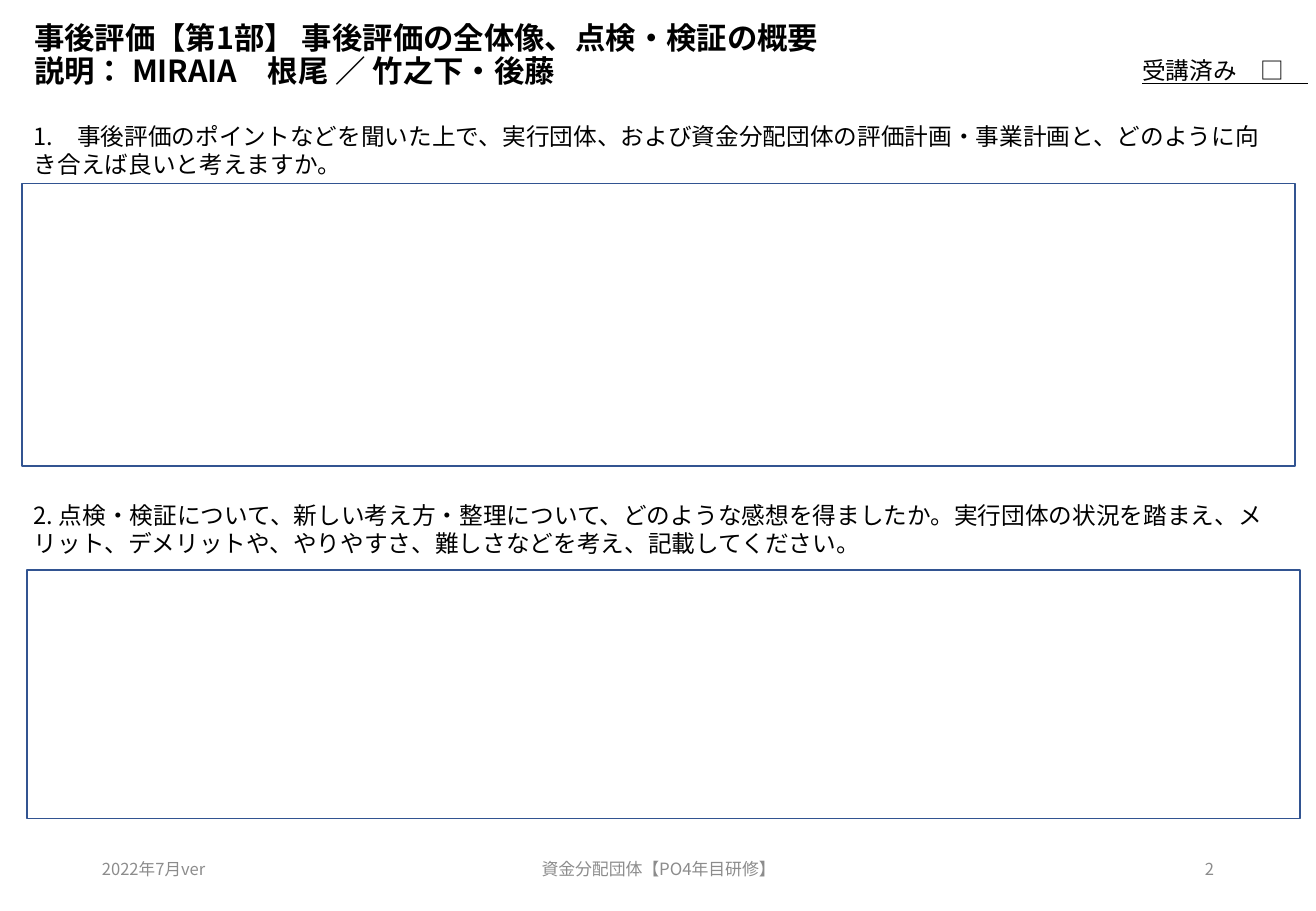
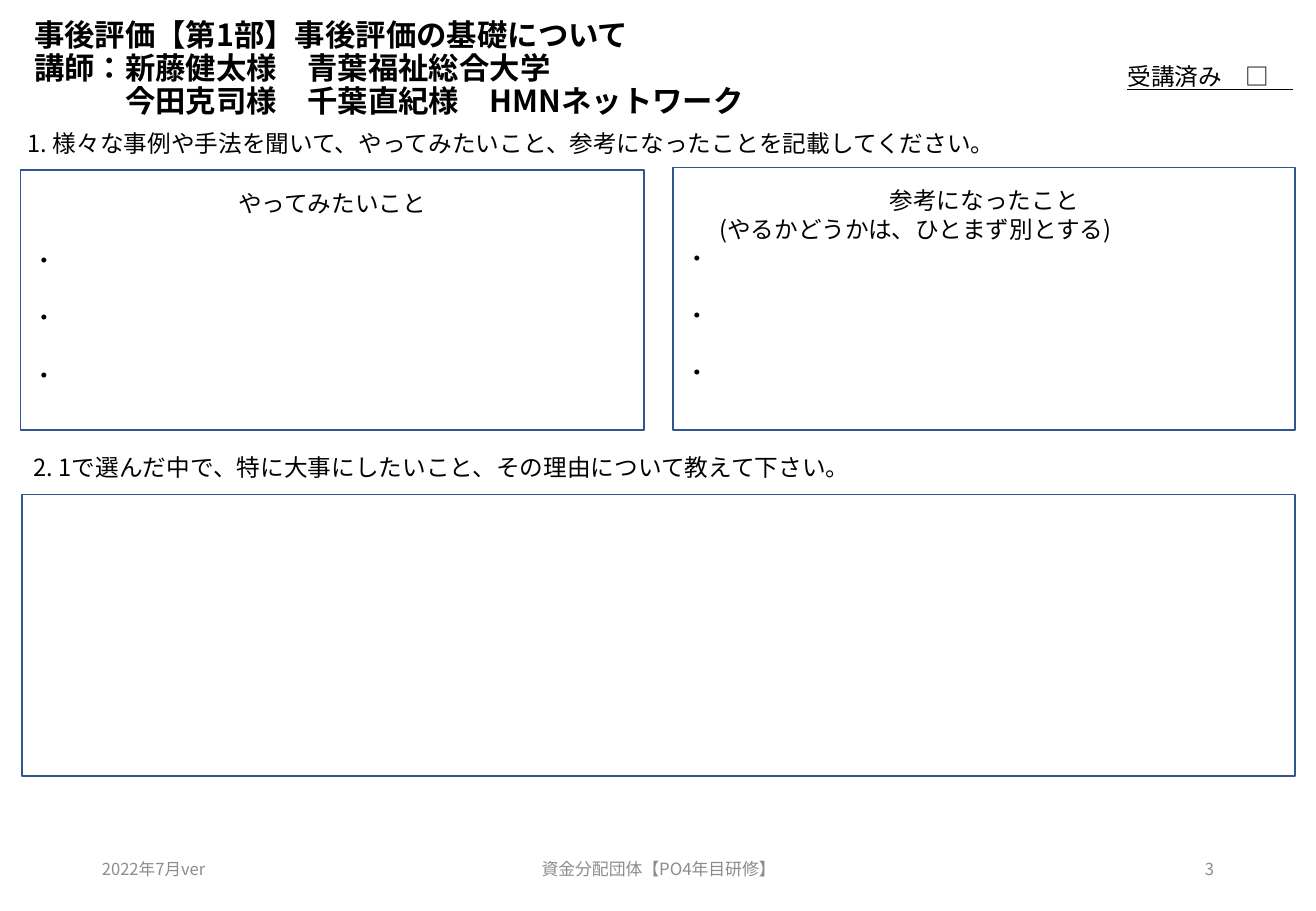
from pptx import Presentation
from pptx.dml.color import RGBColor
from pptx.enum import lang, shapes, text
from pptx.util import Inches, Pt

FONT = "Noto Sans CJK JP"
BLACK, GRAY, WHITE, BLUE = "000000", "8C8C8C", "FFFFFF", "325491"
LEFT, CENTER, RIGHT = text.PP_ALIGN.LEFT, text.PP_ALIGN.CENTER, text.PP_ALIGN.RIGHT
TOP, MIDDLE = text.MSO_ANCHOR.TOP, text.MSO_ANCHOR.MIDDLE


def rgb(color):
    return RGBColor.from_string(color)


def write(sp, lines, size=14, leading=17, color=BLACK, anchor=TOP, bold=False, underline=False):
    tf = sp.text_frame
    tf.word_wrap = True
    tf.auto_size = text.MSO_AUTO_SIZE.NONE
    tf.vertical_anchor = anchor
    for i, (line, align, indent, before) in enumerate(lines):
        p = tf.add_paragraph() if i else tf.paragraphs[0]
        p.text = line
        p.alignment = align
        p.line_spacing = Pt(leading)
        p.space_before = Pt(before)
        pPr = p._p.get_or_add_pPr()
        pPr.set("marL", str(Inches(indent)))
        pPr.set("indent", "0")
        for r in p.runs:
            r.font.name = FONT
            r.font.size = Pt(size)
            r.font.bold = bold
            r.font.underline = underline
            r.font.color.rgb = rgb(color)
            r.font.language_id = lang.MSO_LANGUAGE_ID.JAPANESE
            latin = r._r.rPr.find("{*}latin")
            ea = latin.makeelement(latin.tag.replace("latin", "ea"), {"typeface": FONT})
            latin.addnext(ea)


bullets = [("・", LEFT, 0, 17)] * 2

slides = [
    {
        "number": "2",
        "title": [
            ("事後評価【第1部】 事後評価の全体像、点検・検証の概要", LEFT, 0, 0),
            ("説明： MIRAIA　根尾 ／ 竹之下・後藤", LEFT, 0, 0),
        ],
        "title_at": (0.18, -0.04, 9.92, 0.99),
        "done_at": (9.3, 0.41, 2.01, 0.34),
        "questions": [
            ("1.　事後評価のポイントなどを聞いた上で、実行団体、および資金分配団体の評価計画・事業計画と、"
             "どのように向き合えば良いと考えますか。", (0.18, 0.95, 10.48, 0.57)),
            ("2. 点検・検証について、新しい考え方・整理について、どのような感想を得ましたか。"
             "実行団体の状況を踏まえ、メリット、デメリットや、やりやすさ、難しさなどを考え、記載してください。",
             (0.18, 4.07, 10.39, 0.57)),
        ],
        "answers": [
            ([], (0.18, 1.51, 10.48, 2.33)),
            ([], (0.22, 4.69, 10.48, 2.05)),
        ],
    },
    {
        "number": "3",
        "title": [
            ("事後評価【第1部】事後評価の基礎について", LEFT, 0, 0),
            ("講師：新藤健太様　青葉福祉総合大学", LEFT, 0, 0),
            ("今田克司様　千葉直紀様　HMNネットワーク", LEFT, 0.75, 0),
        ],
        "title_at": (0.18, 0.14, 9.34, 0.86),
        "done_at": (9.18, 0.46, 2.01, 0.34),
        "questions": [
            ("1. 様々な事例や手法を聞いて、やってみたいこと、参考になったことを記載してください。",
             (0.13, 1.01, 10.39, 0.34)),
            ("2. 1で選んだ中で、特に大事にしたいこと、その理由について教えて下さい。",
             (0.18, 3.68, 10.48, 0.34)),
        ],
        "answers": [
            ([("やってみたいこと", CENTER, 0, 0), ("・", LEFT, 0, 17)] + bullets,
             (0.17, 1.4, 5.13, 2.14)),
            ([("参考になったこと", CENTER, 0, 0),
              ("(やるかどうかは、ひとまず別とする)", LEFT, 0.28, 0),
              ("・", LEFT, 0, 0)] + bullets,
             (5.54, 1.38, 5.12, 2.16)),
            ([], (0.18, 4.07, 10.48, 2.32)),
        ],
    },
]

prs = Presentation()
prs.slide_width = Inches(10.83)
prs.slide_height = Inches(7.5)

for content in slides:
    s = prs.slides.add_slide(prs.slide_layouts[5])

    title = s.shapes.title
    title.left, title.top, title.width, title.height = map(Inches, content["title_at"])
    write(title, content["title"], size=18, leading=19.6, anchor=MIDDLE, bold=True)

    for lines, at in content["answers"]:
        sp = s.shapes.add_shape(shapes.MSO_SHAPE.RECTANGLE, *map(Inches, at))
        sp.shadow.inherit = False
        sp.fill.solid()
        sp.fill.fore_color.rgb = rgb(WHITE)
        sp.line.color.rgb = rgb(BLUE)
        sp.line.width = Pt(1)
        sp.text_frame.margin_top = Inches(0.15)
        write(sp, lines)

    for question, at in content["questions"]:
        sp = s.shapes.add_textbox(*map(Inches, at))
        write(sp, [(question, LEFT, 0, 0)])

    sp = s.shapes.add_textbox(*map(Inches, content["done_at"]))
    write(sp, [("受講済み　□　", LEFT, 0, 0)], underline=True)

    for footer, x, width, size, align in [
        ("2022年7月ver", 0.74, 2.44, 9.8, LEFT),
        ("資金分配団体【PO4年目研修】", 3.59, 3.66, 10, CENTER),
        (content["number"], 7.65, 2.44, 9.8, RIGHT),
    ]:
        sp = s.shapes.add_textbox(Inches(x), Inches(6.95), Inches(width), Inches(0.4))
        write(sp, [(footer, align, 0, 0)], size=size, leading=12, color=GRAY, anchor=MIDDLE)

prs.save("out.pptx")
